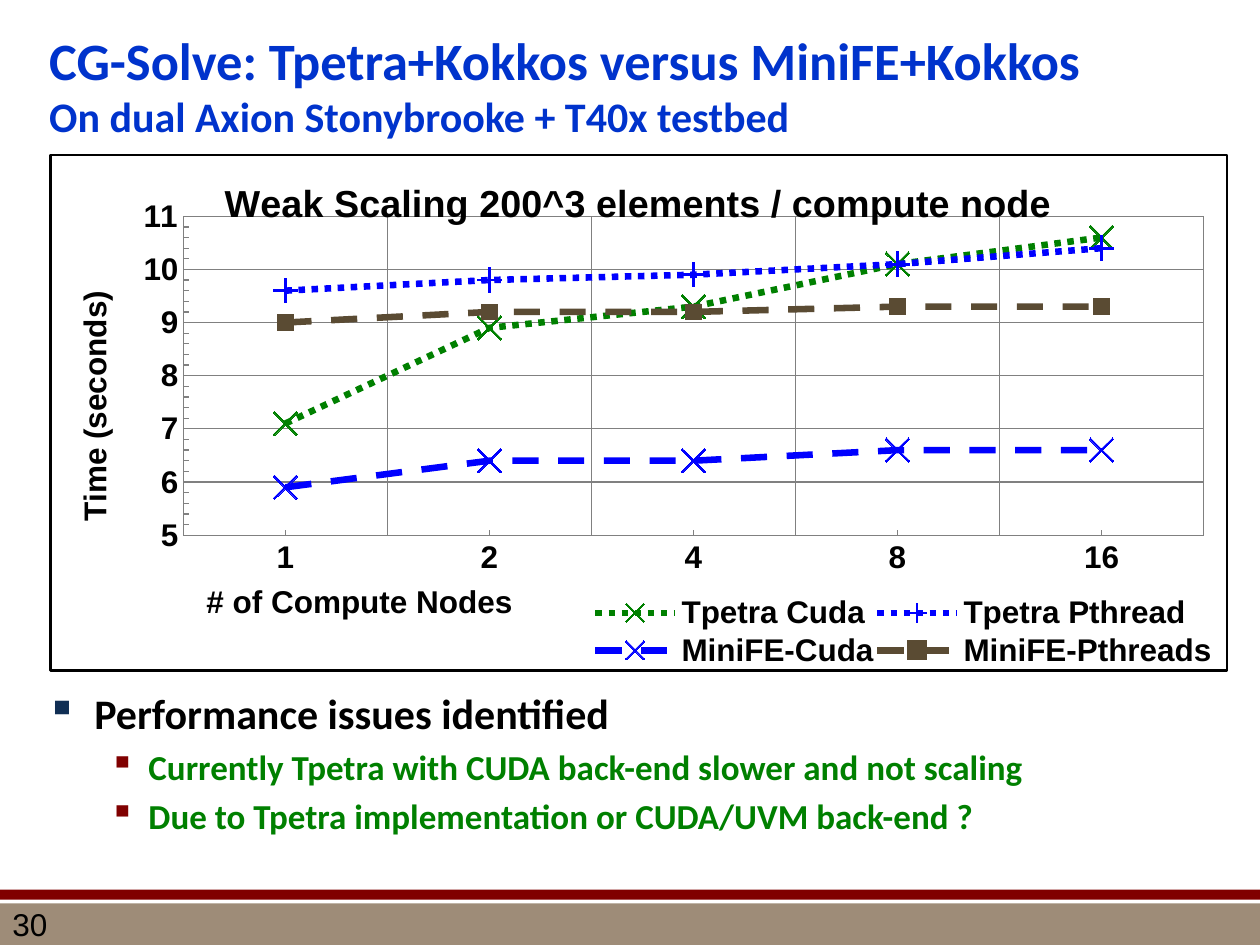
"""Build the CG-Solve weak scaling slide."""
from dataclasses import dataclass

from lxml.etree import SubElement as Sub
from pptx import Presentation
from pptx.chart.data import CategoryChartData as Data
from pptx.dml.color import RGBColor as RGB
from pptx.enum.chart import XL_CHART_TYPE as Kind
from pptx.enum.chart import XL_LEGEND_POSITION as Spot
from pptx.enum.chart import XL_MARKER_STYLE as Mark
from pptx.enum.chart import XL_TICK_MARK as Tick
from pptx.enum.dml import MSO_LINE as Dash
from pptx.enum.shapes import MSO_SHAPE as Form
from pptx.enum.text import MSO_ANCHOR as Anchor
from pptx.oxml import parse_xml
from pptx.oxml.ns import nsdecls, qn
from pptx.util import Inches, Pt

HUES = {"blue": "0033CC", "green": "008000", "pure": "0000FF", "brown": "5A4B33",
        "black": "000000", "red": "800000", "navy": "102E54", "tan": "9E8C78",
        "grey": "808080"}


@dataclass
class Run:
    text: str
    size: float
    hue: str = "black"
    face: str = "Calibri"
    bold: bool = True


@dataclass
class Item:
    run: Run
    dot: str
    left: float
    hang: float
    gap: float
    level: int


@dataclass
class Line:
    name: str
    vals: tuple
    hue: str
    dash: int
    mark: int
    size: int


@dataclass
class Bar:
    top: float
    high: float
    hue: str


@dataclass
class Label:
    run: Run
    box: tuple
    turn: int = 0
    wrap: bool = False


BARS = [Bar(7.17, 0.33, "tan"), Bar(7.06, 0.08, "red")]
HEAD = [Run("CG-Solve: Tpetra+Kokkos versus MiniFE+Kokkos", 30, "blue"),
        Run("On dual Axion Stonybrooke + T40x testbed", 24, "blue")]
LABELS = [
    Label(Run("# of Compute Nodes", 18, face="Arial"), (1.54, 4.57, 2.66, 0.4)),
    Label(Run("Time (seconds)", 18, face="Arial"), (-0.28, 3.01, 2.05, 0.4), 270),
    Label(Run("30", 18, face="Arial", bold=False), (0, 7.13, 2.33, 0.37), wrap=True),
]
ITEMS = [
    Item(Run("Performance issues identified", 24), "navy", 0.38, 0.38, 0, 0),
    Item(Run("Currently Tpetra with CUDA back-end slower and not scaling", 20, "green"),
         "red", 0.81, 0.31, 4, 1),
    Item(Run("Due to Tpetra implementation or CUDA/UVM back-end ?", 20, "green"),
         "red", 0.81, 0.31, 4, 1),
]
NODES = ("1", "2", "4", "8", "16")
LINES = [
    Line("Tpetra Cuda", (7.1, 8.9, 9.3, 10.1, 10.6), "green", Dash.ROUND_DOT, Mark.X, 14),
    Line("Tpetra Pthread", (9.6, 9.8, 9.9, 10.1, 10.4), "pure", Dash.ROUND_DOT, Mark.PLUS, 14),
    Line("MiniFE-Cuda", (5.9, 6.4, 6.4, 6.6, 6.6), "pure", Dash.DASH, Mark.X, 14),
    Line("MiniFE-Pthreads", (9.0, 9.2, 9.2, 9.3, 9.3), "brown", Dash.DASH, Mark.SQUARE, 9),
]


def tint(name: str) -> RGB:
    return RGB.from_string(HUES[name])


def style(font, size: float, hue: str, face: str, bold: bool) -> None:
    font.size, font.name, font.bold = Pt(size), face, bold
    font.color.rgb = tint(hue)


def write(para, run: Run) -> None:
    part = para.add_run()
    part.text = run.text
    style(part.font, run.size, run.hue, run.face, run.bold)


def frame(slide, box: tuple, wrap: bool, turn: int = 0):
    shape = slide.shapes.add_textbox(*map(Inches, box))
    shape.rotation = turn
    shape.text_frame.word_wrap = wrap
    return shape.text_frame


def draw_bar(slide, bar: Bar) -> None:
    shape = slide.shapes.add_shape(Form.RECTANGLE, 0, Inches(bar.top), Inches(10), Inches(bar.high))
    shape.shadow.inherit = False
    shape.fill.solid()
    shape.fill.fore_color.rgb = tint(bar.hue)
    shape.line.fill.background()


def draw_head(slide) -> None:
    text = frame(slide, (0.39, 0.14, 9, 1.06), False)
    text.margin_left = text.margin_right = text.margin_top = text.margin_bottom = 0
    text.vertical_anchor = Anchor.MIDDLE
    para = text.paragraphs[0]
    write(para, HEAD[0])
    para.add_line_break()
    write(para, HEAD[1])


def draw_list(slide) -> None:
    text = frame(slide, (0.27, 5.41, 9.42, 1.64), True)
    for num, item in enumerate(ITEMS):
        para = text.add_paragraph() if num else text.paragraphs[0]
        para.level = item.level
        para.space_before = Pt(item.gap)
        props = para._p.get_or_add_pPr()
        props.set("marL", str(Inches(item.left)))
        props.set("indent", str(-Inches(item.hang)))
        Sub(Sub(props, qn("a:buClr")), qn("a:srgbClr"), val=HUES[item.dot])
        Sub(props, qn("a:buChar"), char="▪")
        write(para, item.run)


def layout(box: tuple, inner: bool = False):
    node = parse_xml(f"<c:layout {nsdecls('c')}><c:manualLayout/></c:layout>")
    if inner:
        Sub(node[0], qn("c:layoutTarget"), val="inner")
    for key in ("xMode", "yMode"):
        Sub(node[0], qn(f"c:{key}"), val="edge")
    for key, val in zip("xywh", box):
        Sub(node[0], qn(f"c:{key}"), val=str(val))
    return node


def clear(node) -> None:
    for old in node.findall(qn("c:layout")):
        node.remove(old)


def draw_line(series, line: Line) -> None:
    hue = tint(line.hue)
    series.smooth = False
    pen = series.format.line
    pen.color.rgb, pen.width, pen.dash_style = hue, Pt(3.75), line.dash
    mark = series.marker
    mark.style, mark.size = line.mark, line.size
    if line.mark == Mark.SQUARE:
        mark.format.fill.solid()
        mark.format.fill.fore_color.rgb = hue
    else:
        mark.format.fill.background()
    mark.format.line.color.rgb, mark.format.line.width = hue, Pt(0.75)


def draw_chart(slide) -> None:
    data = Data(number_format="General")
    data.categories = NODES
    for line in LINES:
        data.add_series(line.name, line.vals)
    box = map(Inches, (0.39, 1.22, 9.36, 4.11))
    chart = slide.shapes.add_chart(Kind.LINE_MARKERS, *box, data).chart
    style(chart.font, 18, "black", "Arial", True)
    chart.has_title = True
    write(chart.chart_title.text_frame.paragraphs[0],
          Run("Weak Scaling 200^3 elements / compute node", 21.6, face="Arial"))
    chart.plots[0].vary_by_categories = False
    for series, line in zip(chart.plots[0].series, LINES):
        draw_line(series, line)
    cat, val = chart.category_axis, chart.value_axis
    for axis in (cat, val):
        axis.has_major_gridlines = True
        for pen in (axis.major_gridlines.format.line, axis.format.line):
            pen.color.rgb, pen.width = tint("grey"), Pt(0.75)
        style(axis.tick_labels.font, 18, "black", "Arial", True)
    cat.major_tick_mark, cat.minor_tick_mark = Tick.NONE, Tick.INSIDE
    val.major_tick_mark = val.minor_tick_mark = Tick.INSIDE
    val.minimum_scale, val.maximum_scale = 5, 11
    val.major_unit, val.minor_unit = 1, 0.2
    chart.has_legend = True
    key = chart.legend
    key.position, key.include_in_layout = Spot.BOTTOM, False
    style(key.font, 18, "black", "Arial", True)
    clear(key._element)
    key._element.find(qn("c:legendPos")).addnext(layout((0.46, 0.85, 0.53, 0.15)))
    root = chart._chartSpace.find(qn("c:chart"))
    area = root.find(qn("c:plotArea"))
    clear(area)
    area.insert(0, layout((0.113, 0.119, 0.867, 0.619), True))
    root.addnext(parse_xml(
        f"<c:spPr {nsdecls('c', 'a')}><a:noFill/><a:ln w='{Pt(1.5)}'><a:solidFill>"
        f"<a:srgbClr val='{HUES['black']}'/></a:solidFill></a:ln></c:spPr>"))


def main() -> None:
    deck = Presentation()
    deck.slide_width, deck.slide_height = Inches(10), Inches(7.5)
    slide = deck.slides.add_slide(deck.slide_layouts[6])
    for bar in BARS:
        draw_bar(slide, bar)
    draw_head(slide)
    draw_chart(slide)
    for label in LABELS:
        text = frame(slide, label.box, label.wrap, label.turn)
        write(text.paragraphs[0], label.run)
    draw_list(slide)
    deck.save("out.pptx")


if __name__ == "__main__":
    main()
